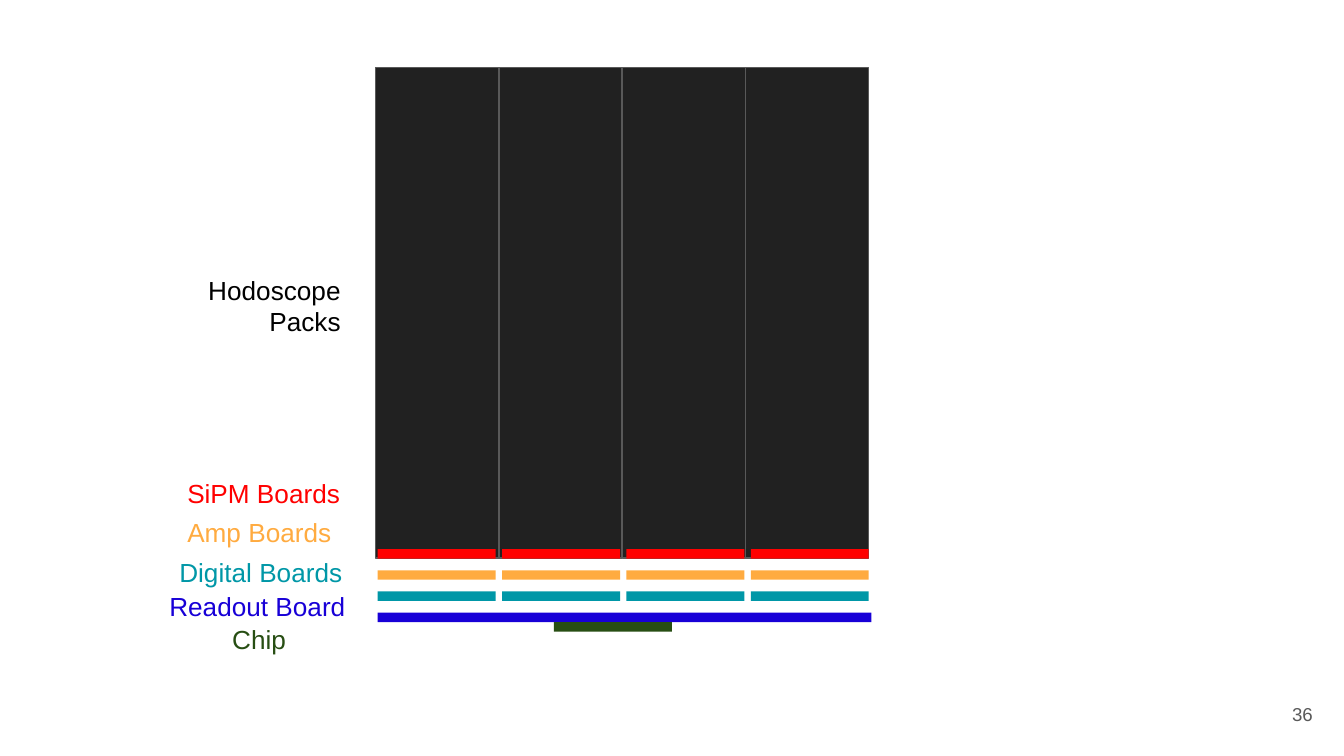
"""Build the slide showing the hodoscope packs and their stacked boards."""
from dataclasses import dataclass

from pptx import Presentation
from pptx.dml.color import RGBColor
from pptx.enum.shapes import MSO_SHAPE as Shape
from pptx.enum.text import MSO_ANCHOR as Anchor, PP_ALIGN as Align
from pptx.shapes.shapetree import GroupShapes, SlideShapes
from pptx.util import Cm, Pt

COLORS = {
    "pack": "212121",
    "grey": "595959",
    "black": "000000",
    "sipm": "FF0000",
    "amp": "FFAB40",
    "digital": "0097A7",
    "readout": "1800D7",
    "chip": "274E13",
}
COLUMNS = 4
PACK_LEFT, PACK_WIDTH = 7.1, 2.33
BOARD_LEFT, BOARD_WIDTH, BOARD_HEIGHT = 7.14, 2.23, 0.18
BOARD_TOP, BOARD_STEP, COLUMN_STEP = 10.38, 0.4, 2.35


@dataclass
class Bar:
    left: float
    top: float
    width: float
    height: float
    color: str
    outline: str = ""


@dataclass
class Label:
    text: str
    left: float
    top: float
    color: str
    width: float = 4.22
    height: float = 0.64
    size: int = 14
    align: Align = Align.LEFT
    anchor: Anchor = Anchor.TOP


LABELS = [
    Label("36", 23.54, 12.95, "grey", 1.52, 1.09, 10, Align.RIGHT, Anchor.MIDDLE),
    Label("Hodoscope Packs", 3.27, 4.93, "black", 3.42, 1.98, align=Align.RIGHT),
    Label("SiPM Boards", 3.29, 8.77, "sipm"),
    Label("Amp Boards", 3.29, 9.51, "amp"),
    Label("Digital Boards", 3.14, 10.27, "digital"),
    Label("Readout Board", 2.95, 10.91, "readout"),
    Label("Chip", 4.14, 11.54, "chip"),
]


def rgb(name: str) -> RGBColor:
    """Return the named colour."""
    return RGBColor.from_string(COLORS[name])


def draw_bar(shapes: SlideShapes | GroupShapes, bar: Bar) -> None:
    """Draw a filled rectangle with an optional outline."""
    s = shapes.add_shape(Shape.RECTANGLE, Cm(bar.left), Cm(bar.top),
                         Cm(bar.width), Cm(bar.height))
    s.shadow.inherit = False
    s.fill.solid()
    s.fill.fore_color.rgb = rgb(bar.color)
    if bar.outline:
        s.line.color.rgb = rgb(bar.outline)
        s.line.width = Pt(0.75)
    else:
        s.line.fill.background()


def draw_label(shapes: SlideShapes, label: Label) -> None:
    """Draw a one-paragraph text box."""
    tf = shapes.add_textbox(Cm(label.left), Cm(label.top),
                            Cm(label.width), Cm(label.height)).text_frame
    tf.word_wrap = True
    tf.vertical_anchor = label.anchor
    tf.margin_left = tf.margin_right = tf.margin_top = tf.margin_bottom = Cm(0.25)
    p = tf.paragraphs[0]
    p.text = label.text
    p.alignment = label.align
    p.font.name = "Arial"
    p.font.size = Pt(label.size)
    p.font.color.rgb = rgb(label.color)


def main() -> None:
    """Build and save the slide."""
    prs = Presentation()
    prs.slide_width, prs.slide_height = Cm(25.4), Cm(14.29)
    shapes = prs.slides.add_slide(prs.slide_layouts[6]).shapes

    packs = shapes.add_group_shape().shapes
    for col in range(COLUMNS):
        draw_bar(packs, Bar(PACK_LEFT + col * PACK_WIDTH, 1.28,
                            PACK_WIDTH, 9.27, "pack", "grey"))

    for row, color in enumerate(("sipm", "amp", "digital")):
        for col in range(COLUMNS):
            draw_bar(shapes, Bar(BOARD_LEFT + col * COLUMN_STEP,
                                 BOARD_TOP + row * BOARD_STEP,
                                 BOARD_WIDTH, BOARD_HEIGHT, color))

    readout_top = BOARD_TOP + 3 * BOARD_STEP
    draw_bar(shapes, Bar(BOARD_LEFT, readout_top, 9.33, BOARD_HEIGHT, "readout"))
    draw_bar(shapes, Bar(10.47, readout_top + BOARD_HEIGHT,
                         BOARD_WIDTH, BOARD_HEIGHT, "chip"))

    for label in LABELS:
        draw_label(shapes, label)
    prs.save("out.pptx")


if __name__ == "__main__":
    main()
